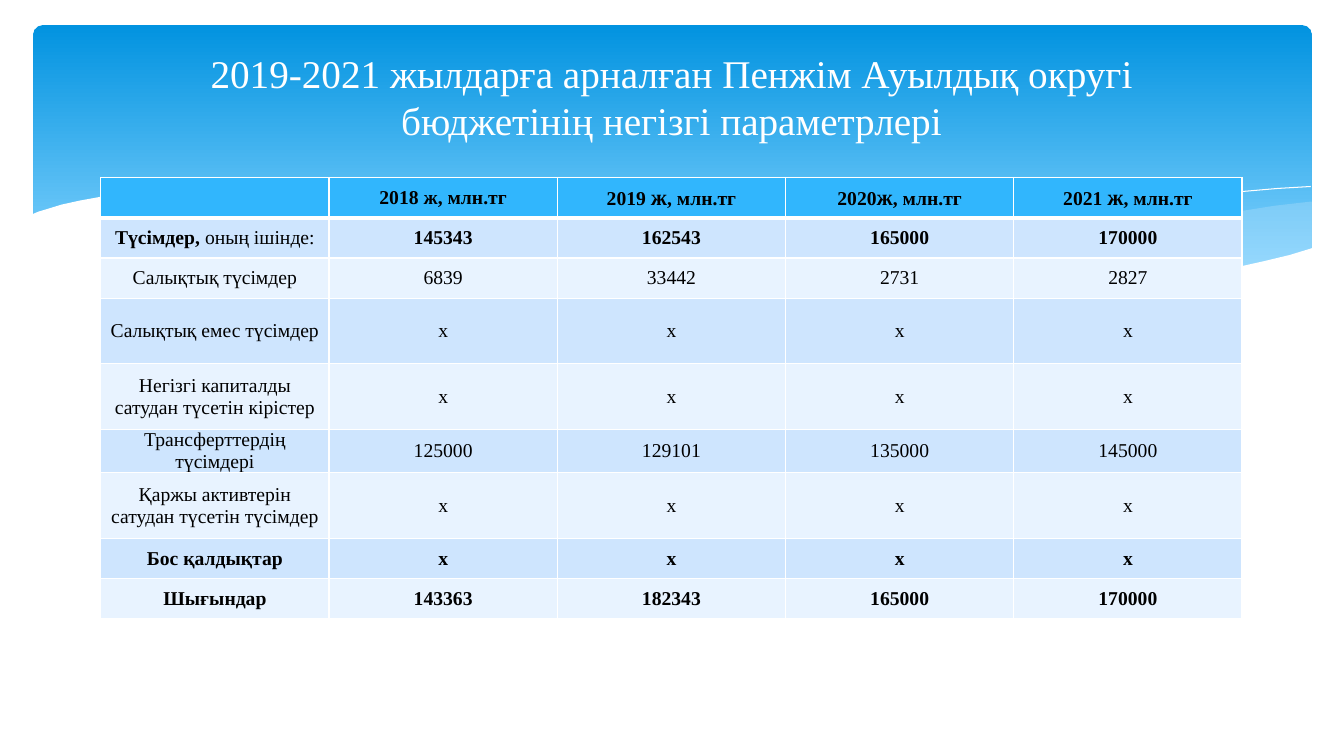
from dataclasses import dataclass

from lxml import etree
from pptx import Presentation
from pptx import util as u
from pptx.dml.color import RGBColor
from pptx.enum import shapes, text
from pptx.oxml.ns import qn

FONT = "Times New Roman"
HEX = {
    "white": "FFFFFF", "black": "000000", "sky": "0293E0", "pale": "83D3FE",
    "mist": "C6E7FC", "head": "31B6FD", "odd": "CEE5FE", "even": "E8F3FF",
}


@dataclass
class Wave:
    """Outline in hundredths of an inch; closed when it has a fill."""
    points: list[tuple[int, int]]
    fill: str = ""
    alpha: int = 100


@dataclass
class Run:
    text: str
    size: int = 14
    bold: bool = True


@dataclass
class Row:
    label: list[Run]
    values: list[str]
    height: float = 0.4
    bold: bool = False


WAVES = [
    Wave([(1300, 200), (1265, 204), (1208, 213), (1147, 223), (1073, 237),
          (1005, 248), (941, 257), (882, 265), (921, 269), (976, 274),
          (1025, 277), (1071, 278), (1126, 277), (1174, 273), (1218, 267),
          (1257, 259), (1301, 247), (1301, 200)], "mist", 29),
    Wave([(1190, 273), (1116, 265), (1034, 254), (941, 240), (839, 222),
          (778, 211), (721, 203), (669, 196), (619, 191), (560, 187),
          (506, 185), (459, 186), (418, 188), (382, 191), (431, 196),
          (483, 203), (539, 211), (599, 222), (706, 240), (802, 255),
          (887, 266), (963, 274), (1030, 277), (1090, 278), (1143, 277),
          (1190, 273)], "mist", 40),
    Wave([(412, 195), (447, 191), (499, 188), (555, 187), (625, 189),
          (710, 194), (775, 200), (848, 208), (927, 219), (1014, 233),
          (1108, 251), (1210, 272)]),
    Wave([(818, 257), (870, 246), (927, 235), (997, 223), (1075, 210),
          (1155, 199), (1194, 194), (1232, 190), (1267, 187), (1300, 185)]),
    Wave([(1302, 246), (1279, 253), (1254, 259), (1227, 265), (1198, 269),
          (1167, 273), (1134, 275), (1097, 277), (1058, 276), (1015, 275),
          (969, 272), (918, 268), (863, 262), (804, 254), (740, 245),
          (671, 233), (596, 220), (521, 207), (453, 197), (390, 190),
          (333, 186), (282, 184), (235, 184), (194, 185), (158, 187),
          (127, 191), (101, 195), (79, 199), (61, 203), (48, 207), (38, 210),
          (31, 213), (31, 329), (1302, 329)], "white"),
]

HEADS = [
    [],
    [Run("2018 ж, млн.тг")],
    [Run("2019 "), Run("ж", 16), Run(", млн.тг")],
    [Run("2020"), Run("ж", 16), Run(", млн.тг")],
    [Run("2021 "), Run("ж", 16), Run(", млн.тг")],
]
NONE = ["х"] * 4
ROWS = [
    Row([Run("Түсімдер, "), Run("оның ішінде:", bold=False)],
        ["145343", "162543", "165000", "170000"], bold=True),
    Row([Run("Салықтық түсімдер", bold=False)],
        ["6839", "33442", "2731", "2827"]),
    Row([Run("Салықтық емес түсімдер", bold=False)], NONE, 0.65),
    Row([Run("Негізгі капиталды сатудан түсетін кірістер", bold=False)],
        NONE, 0.65),
    Row([Run("Трансферттердің түсімдері", bold=False)],
        ["125000", "129101", "135000", "145000"], 0.43),
    Row([Run("Қаржы активтерін сатудан түсетін түсімдер", bold=False)],
        NONE, 0.65),
    Row([Run("Бос қалдықтар")], NONE, bold=True),
    Row([Run("Шығындар")], ["143363", "182343", "165000", "170000"],
        bold=True),
]


def color(name: str) -> RGBColor:
    return RGBColor.from_string(HEX[name])


def add_band(slide) -> None:
    band = slide.shapes.add_shape(
        shapes.MSO_SHAPE.ROUNDED_RECTANGLE, u.Inches(0.33), u.Inches(0.25),
        u.Inches(12.68), u.Inches(2.7))
    band.adjustments[0] = 0.034
    band.shadow.inherit = False
    band.line.fill.background()
    band.fill.gradient()
    band.fill.gradient_angle = 270
    for stop, name, place in zip(band.fill.gradient_stops,
                                 ("sky", "pale"), (0, 0.9)):
        stop.color.rgb = color(name)
        stop.position = place


def add_wave(slide, wave: Wave) -> None:
    pen = slide.shapes.build_freeform(*wave.points[0], scale=u.Inches(0.01))
    pen.add_line_segments(wave.points[1:], close=bool(wave.fill))
    shape = pen.convert_to_shape()
    shape.shadow.inherit = False
    if not wave.fill:
        shape.fill.background()
        shape.line.color.rgb = color("white")
        shape.line.width = u.Pt(0)
        return
    shape.line.fill.background()
    shape.fill.solid()
    shape.fill.fore_color.rgb = color(wave.fill)
    if wave.alpha < 100:
        tint = shape.element.spPr.find(qn("a:solidFill"))[0]
        etree.SubElement(tint, qn("a:alpha"), val=str(wave.alpha * 1000))


def set_edges(cell, base: int) -> None:
    """Draw white cell borders; base is the bottom width in points."""
    props = cell._tc.get_or_add_tcPr()
    for side, width in zip("LRTB", (1, 1, 1, base)):
        line = etree.SubElement(props, qn(f"a:ln{side}"),
                                w=str(u.Pt(width)))
        fill = etree.SubElement(line, qn("a:solidFill"))
        etree.SubElement(fill, qn("a:srgbClr"), val=HEX["white"])


def fill_cell(cell, runs: list[Run], fill: str, base: int = 1) -> None:
    set_edges(cell, base)
    cell.fill.solid()
    cell.fill.fore_color.rgb = color(fill)
    cell.vertical_anchor = text.MSO_ANCHOR.MIDDLE
    cell.margin_left = cell.margin_right = u.Inches(0.07)
    cell.margin_top = cell.margin_bottom = 0
    para = cell.text_frame.paragraphs[0]
    para.alignment = text.PP_ALIGN.CENTER
    para.font.name = FONT
    para.font.size = u.Pt(14)
    para.font.color.rgb = color("black")
    for item in runs:
        run = para.add_run()
        run.text = item.text
        run.font.bold = item.bold
        if item.size != 14:
            run.font.size = u.Pt(item.size)


def add_budget(slide) -> None:
    high = 0.4 + sum(row.height for row in ROWS)
    table = slide.shapes.add_table(
        len(ROWS) + 1, len(HEADS), u.Inches(1), u.Inches(1.76),
        u.Inches(11.32), u.Inches(high)).table
    table.rows[0].height = u.Inches(0.4)
    for col, runs in enumerate(HEADS):
        fill_cell(table.cell(0, col), runs, "head", 3)
    for num, row in enumerate(ROWS, 1):
        table.rows[num].height = u.Inches(row.height)
        cells = [row.label] + [[Run(val, bold=row.bold)]
                               for val in row.values]
        for col, runs in enumerate(cells):
            fill_cell(table.cell(num, col), runs,
                      "odd" if num % 2 else "even")


def set_title(slide) -> None:
    title = slide.shapes.title
    title.left, title.top = u.Inches(1), u.Inches(0.4)
    title.width, title.height = u.Inches(11.32), u.Inches(1.12)
    frame = title.text_frame
    frame.text = ("2019-2021 жылдарға арналған Пенжім Ауылдық округі "
                  "бюджетінің негізгі параметрлері")
    frame.word_wrap = True
    frame.vertical_anchor = text.MSO_ANCHOR.MIDDLE
    para = frame.paragraphs[0]
    para.alignment = text.PP_ALIGN.CENTER
    para.font.name = FONT
    para.font.size = u.Pt(28)
    para.font.color.rgb = color("white")
    title.element.getparent().append(title.element)  # bring to front


def main() -> None:
    deck = Presentation()
    deck.slide_width, deck.slide_height = u.Inches(13.33), u.Inches(7.5)
    slide = deck.slides.add_slide(deck.slide_layouts[5])
    add_band(slide)
    for wave in WAVES:
        add_wave(slide, wave)
    add_budget(slide)
    set_title(slide)
    deck.save("out.pptx")


if __name__ == "__main__":
    main()
